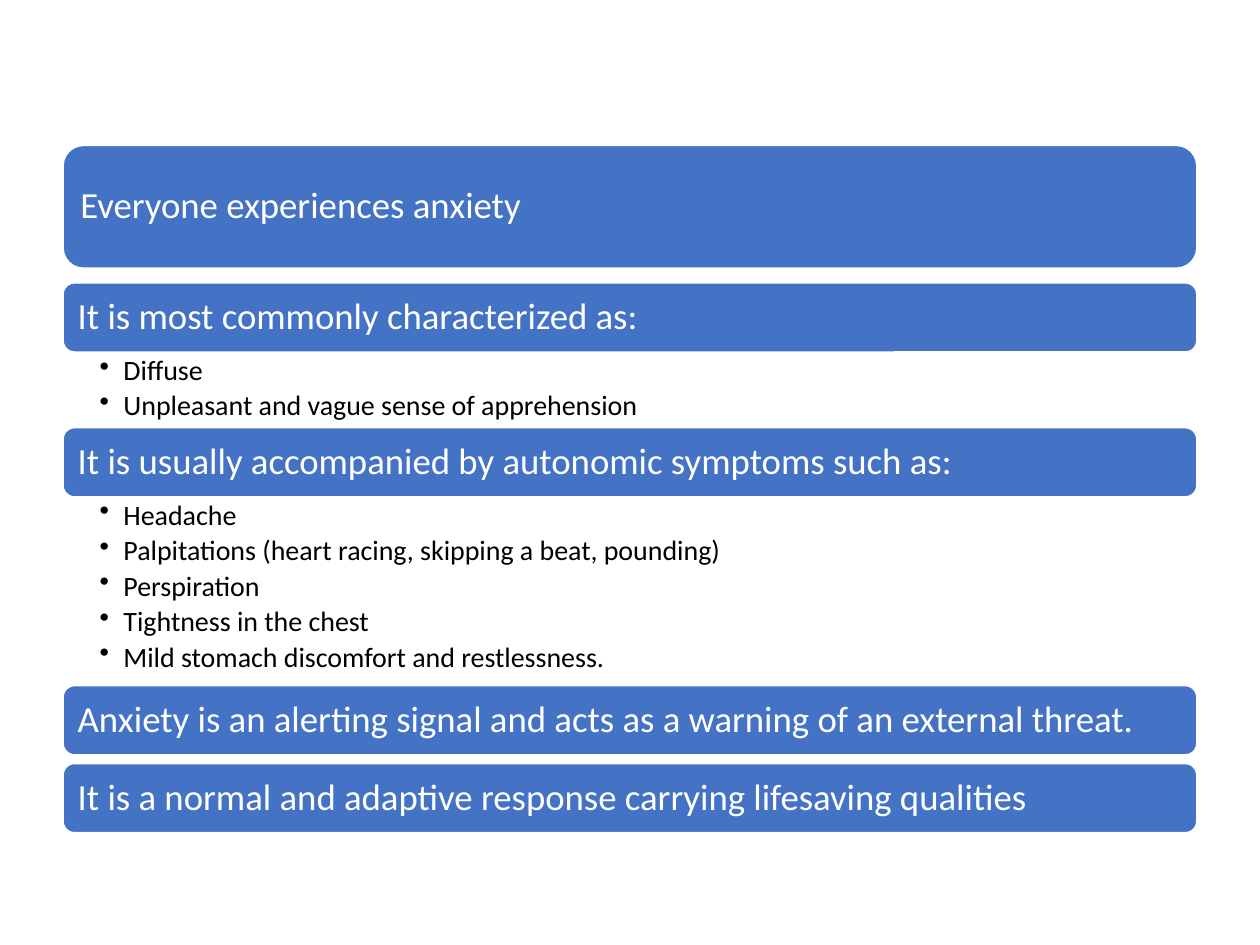
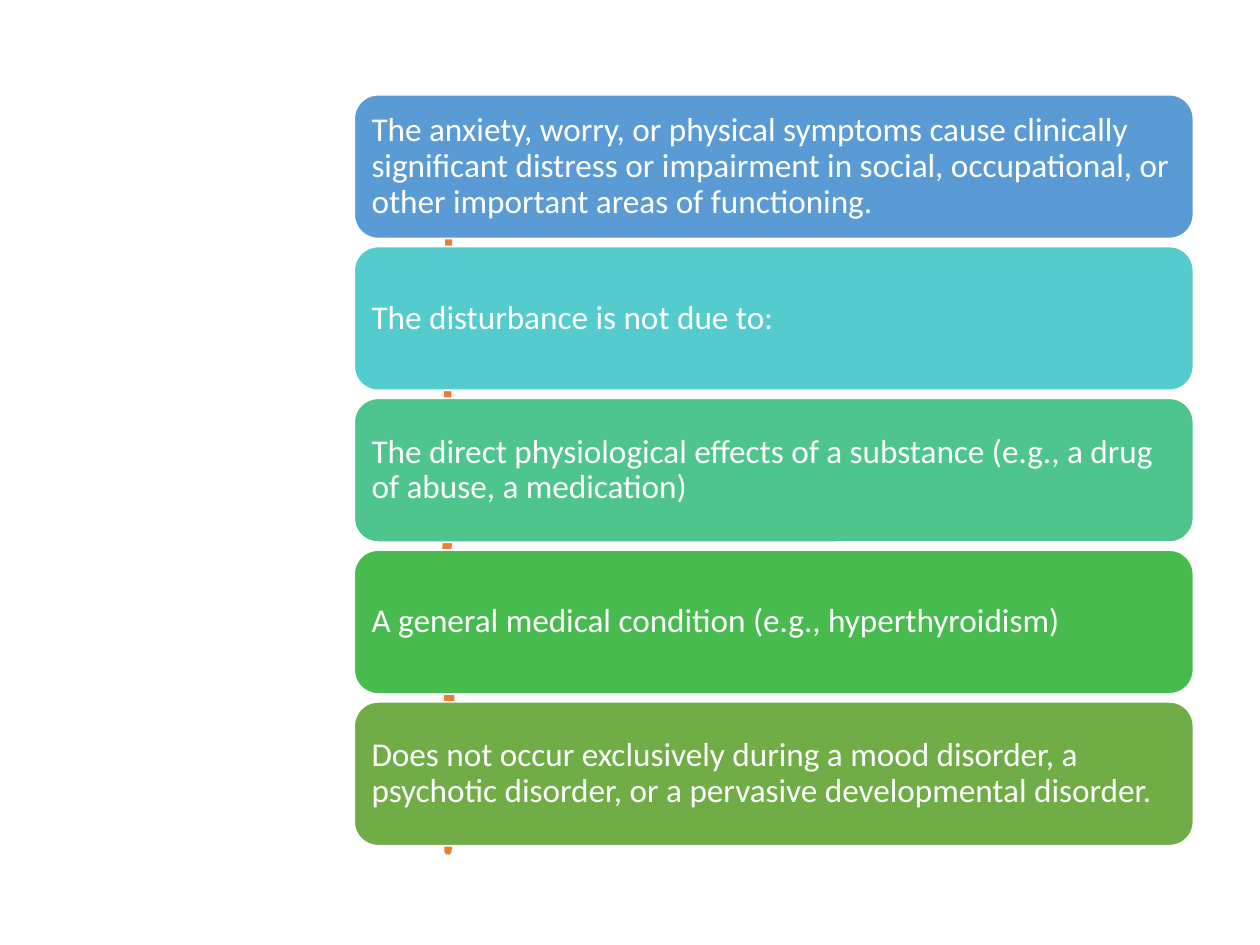
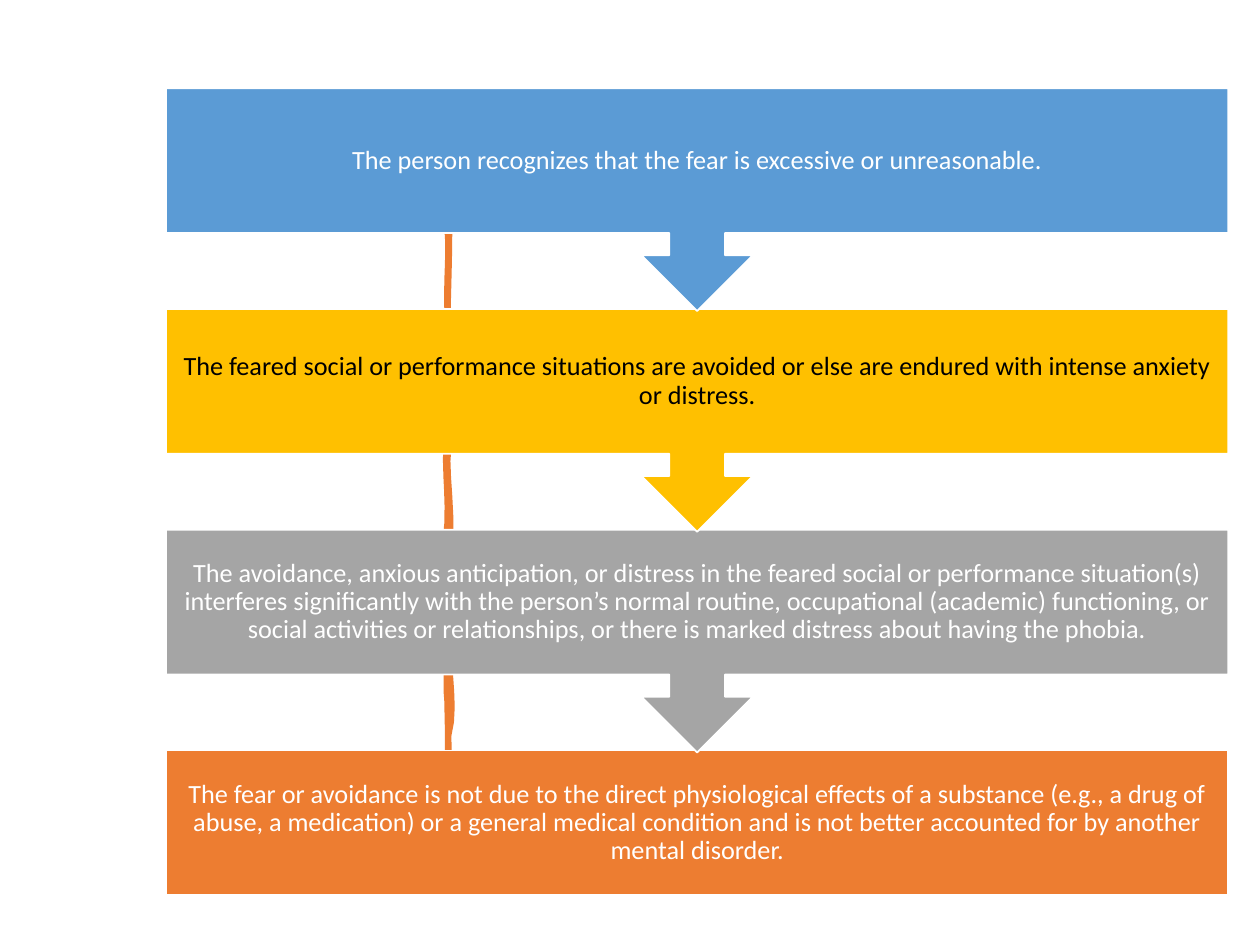
from dataclasses import dataclass

from lxml.etree import SubElement
from pptx import Presentation
from pptx.dml.color import RGBColor
from pptx.enum.shapes import MSO_SHAPE
from pptx.enum.text import MSO_ANCHOR, PP_ALIGN
from pptx.oxml.ns import qn
from pptx.util import Cm, Pt


@dataclass(frozen=True)
class Theme:
    font: str = "Calibri"
    white: str = "FFFFFF"
    black: str = "000000"
    blue: str = "4472C4"
    sky: str = "5B9BD5"
    turquoise: str = "54CCCD"
    mint: str = "4DC58D"
    emerald: str = "48BB4F"
    green: str = "70AD47"
    gold: str = "FFC000"
    gray: str = "A5A5A5"
    orange: str = "ED7D31"
    bar_size: int = 21
    bullet_size: int = 16
    criterion_size: int = 19
    step_size: int = 15
    line_spacing: float = 0.9


THEME = Theme()

ANXIETY_SECTIONS = [
    {"heading": "Everyone experiences anxiety", "height": 2.48, "gap": 0.29, "bullets": []},
    {"heading": "It is most commonly characterized as:", "height": 1.4, "gap": 0,
     "bullets": ["Diffuse", "Unpleasant and vague sense of apprehension"]},
    {"heading": "It is usually accompanied by autonomic symptoms such as:", "height": 1.4, "gap": 0,
     "bullets": ["Headache", "Palpitations (heart racing, skipping a beat, pounding)", "Perspiration",
                 "Tightness in the chest", "Mild stomach discomfort and restlessness."]},
    {"heading": "Anxiety is an alerting signal and acts as a warning of an external threat.",
     "height": 1.4, "gap": 0.17, "bullets": []},
    {"heading": "It is a normal and adaptive response carrying lifesaving qualities",
     "height": 1.4, "gap": 0, "bullets": []},
]

CRITERIA = [
    ("The anxiety, worry, or physical symptoms cause clinically significant distress or impairment "
     "in social, occupational, or other important areas of functioning.", THEME.sky),
    ("The disturbance is not due to:", THEME.turquoise),
    ("The direct physiological effects of a substance (e.g., a drug of abuse, a medication)", THEME.mint),
    ("A general medical condition (e.g., hyperthyroidism)", THEME.emerald),
    ("Does not occur exclusively during a mood disorder, a psychotic disorder, or a pervasive "
     "developmental disorder.", THEME.green),
]

PHOBIA_STEPS = [
    ("The person recognizes that the fear is excessive or unreasonable.", THEME.sky, THEME.white),
    ("The feared social or performance situations are avoided or else are endured with intense "
     "anxiety or distress.", THEME.gold, THEME.black),
    ("The avoidance, anxious anticipation, or distress in the feared social or performance "
     "situation(s) interferes significantly with the person’s normal routine, occupational "
     "(academic) functioning, or social activities or relationships, or there is marked distress "
     "about having the phobia.", THEME.gray, THEME.white),
    ("The fear or avoidance is not due to the direct physiological effects of a substance (e.g., a "
     "drug of abuse, a medication) or a general medical condition and is not better accounted for "
     "by another mental disorder.", THEME.orange, THEME.white),
]

STROKE_UNIT = 0.0254
STROKE_START = (356, 84)
STROKE_CURVES = [
    ((355, 103), (357, 116), (356, 146)),
    ((357, 174), (357, 191), (356, 226)),
    ((355, 258), (356, 262), (356, 294)),
    ((355, 325), (359, 342), (356, 356)),
    ((353, 372), (361, 414), (356, 436)),
    ((349, 462), (353, 483), (356, 510)),
    ((356, 535), (362, 563), (356, 584)),
    ((356, 606), (361, 653), (356, 676)),
    ((356, 675), (355, 676), (355, 676)),
    ((356, 645), (353, 644), (355, 613)),
    ((356, 583), (355, 570), (355, 557)),
    ((353, 546), (356, 494), (355, 477)),
    ((355, 462), (351, 447), (355, 415)),
    ((356, 386), (352, 373), (355, 335)),
    ((354, 300), (356, 279), (355, 250)),
    ((354, 216), (357, 203), (355, 181)),
    ((355, 165), (360, 104), (355, 84)),
]


def color(value):
    return RGBColor.from_string(value)


def add_text(paragraph, text, size, text_color):
    paragraph.line_spacing = THEME.line_spacing
    run = paragraph.add_run()
    run.text = text
    run.font.name = THEME.font
    run.font.size = Pt(size)
    run.font.color.rgb = color(text_color)


def prepare_frame(shape, insets, anchor):
    frame = shape.text_frame
    frame.word_wrap = True
    frame.vertical_anchor = anchor
    frame.margin_left, frame.margin_top, frame.margin_right, frame.margin_bottom = map(Cm, insets)
    return frame


def add_panel(slide, kind, box, fill, text, size, inset, alignment=PP_ALIGN.LEFT, text_color=THEME.white):
    shape = slide.shapes.add_shape(kind, *map(Cm, box))
    shape.shadow.inherit = False
    shape.fill.solid()
    shape.fill.fore_color.rgb = color(fill)
    shape.line.color.rgb = color(THEME.white)
    shape.line.width = Pt(1)
    paragraph = prepare_frame(shape, [inset] * 4, MSO_ANCHOR.MIDDLE).paragraphs[0]
    paragraph.alignment = alignment
    add_text(paragraph, text, size, text_color)


def add_bullets(slide, box, items):
    text_box = slide.shapes.add_textbox(*map(Cm, box))
    frame = prepare_frame(text_box, (0.74, 0.08, 0.41, 0.08), MSO_ANCHOR.TOP)
    for index, item in enumerate(items):
        paragraph = frame.add_paragraph() if index else frame.paragraphs[0]
        properties = paragraph._p.get_or_add_pPr()
        properties.set("marL", str(Cm(0.48)))
        properties.set("indent", str(-Cm(0.48)))
        SubElement(properties, qn("a:buChar")).set("char", "•")
        paragraph.space_after = Pt(3)
        add_text(paragraph, item, THEME.bullet_size, THEME.black)


def curve_points(start, curves, steps=6):
    for first, second, end in curves:
        for step in range(1, steps + 1):
            t = step / steps
            weights = ((1 - t) ** 3, 3 * t * (1 - t) ** 2, 3 * t * t * (1 - t), t ** 3)
            corners = (start, first, second, end)
            yield tuple(Cm(STROKE_UNIT * sum(w * corner[axis] for w, corner in zip(weights, corners)))
                        for axis in (0, 1))
        start = end


def add_brush_stroke(slide):
    start_x, start_y = (Cm(STROKE_UNIT * value) for value in STROKE_START)
    builder = slide.shapes.build_freeform(start_x, start_y)
    builder.add_line_segments(list(curve_points(STROKE_START, STROKE_CURVES)), close=True)
    stroke = builder.convert_to_shape()
    stroke.shadow.inherit = False
    stroke.fill.solid()
    stroke.fill.fore_color.rgb = color(THEME.orange)
    stroke.line.color.rgb = color(THEME.orange)
    stroke.line.width = Pt(3.25)


def build_anxiety_slide(slide):
    left, top, width, bullet_height = 1.27, 2.93, 22.86, 0.76
    for section in ANXIETY_SECTIONS:
        add_panel(slide, MSO_SHAPE.ROUNDED_RECTANGLE, (left, top, width, section["height"]),
                  THEME.blue, section["heading"], THEME.bar_size, 0.23)
        top += section["height"]
        if section["bullets"]:
            height = bullet_height * len(section["bullets"])
            add_bullets(slide, (left, top, width, height), section["bullets"])
            top += height
        top += section["gap"]


def build_criteria_slide(slide):
    left, top, width, height, pitch = 7.14, 1.91, 16.92, 2.9, 3.06
    add_brush_stroke(slide)
    for index, (text, fill) in enumerate(CRITERIA):
        add_panel(slide, MSO_SHAPE.ROUNDED_RECTANGLE, (left, top + index * pitch, width, height),
                  fill, text, THEME.criterion_size, 0.21)


def build_phobia_slide(slide):
    left, top, width, pitch = 3.35, 1.78, 21.41, 4.45
    box_height, callout_height = 2.92, 4.49
    last = len(PHOBIA_STEPS) - 1
    add_brush_stroke(slide)
    for index, (text, fill, text_color) in reversed(list(enumerate(PHOBIA_STEPS))):
        kind, height = ((MSO_SHAPE.RECTANGLE, box_height) if index == last
                        else (MSO_SHAPE.DOWN_ARROW_CALLOUT, callout_height))
        add_panel(slide, kind, (left, top + index * pitch, width, height), fill, text,
                  THEME.step_size, 0.3, PP_ALIGN.CENTER, text_color)


def main():
    presentation = Presentation()
    presentation.slide_width, presentation.slide_height = Cm(25.4), Cm(19.05)
    blank_layout = presentation.slide_layouts[6]
    for build in (build_anxiety_slide, build_criteria_slide, build_phobia_slide):
        build(presentation.slides.add_slide(blank_layout))
    presentation.save("out.pptx")


if __name__ == "__main__":
    main()
